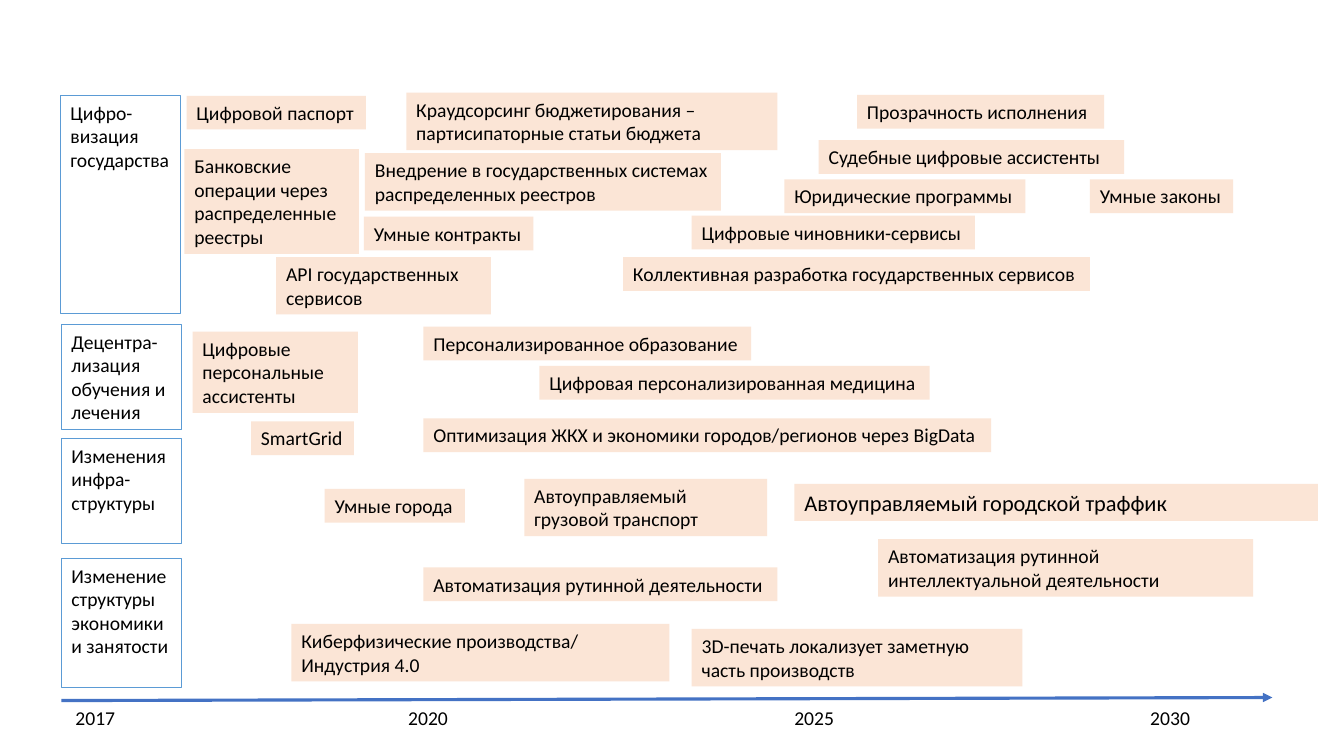
import pptx
import pptx.dml.color
import pptx.enum.shapes
import pptx.enum.text
import pptx.oxml
import pptx.oxml.ns
import pptx.util
from pptx.util import Inches


def color(value):
    return pptx.dml.color.RGBColor.from_string(value)


class Roadmap:
    font = "Calibri"
    text_color = "000000"
    item_fill = "FBE5D6"
    area_fill = "FFFFFF"
    area_line = "5B9BD5"
    axis_color = "4472C4"
    padding = 0.1
    line_height = 0.235

    def __init__(self, prs):
        self.s = prs.slides.add_slide(prs.slide_layouts[6])

    def set_text(self, sp, text, size=14):
        tf = sp.text_frame
        tf.word_wrap = True
        tf.vertical_anchor = pptx.enum.text.MSO_ANCHOR.TOP
        tf.text = text
        for p in tf.paragraphs:
            p.alignment = pptx.enum.text.PP_ALIGN.LEFT
            for r in p.runs:
                r.font.name = self.font
                r.font.size = pptx.util.Pt(size)
                r.font.color.rgb = color(self.text_color)

    def box(self, left, top, width, height, text, fill, size=14):
        sp = self.s.shapes.add_shape(
            pptx.enum.shapes.MSO_SHAPE.RECTANGLE,
            Inches(left), Inches(top), Inches(width), Inches(height))
        sp.shadow.inherit = False
        sp.fill.solid()
        sp.fill.fore_color.rgb = color(fill)
        sp.line.fill.background()
        self.set_text(sp, text, size)
        return sp

    def item(self, left, top, width, lines, text, size=14):
        height = self.padding + self.line_height * lines * size / 14
        self.box(left, top, width, height, text, self.item_fill, size)

    def area(self, left, top, height, text):
        sp = self.box(left, top, 1.19, height, text, self.area_fill)
        sp.line.color.rgb = color(self.area_line)
        sp.line.width = pptx.util.Pt(1)

    def year(self, left, text):
        sp = self.s.shapes.add_textbox(
            Inches(left), Inches(6.95), Inches(0.6), Inches(0.34))
        self.set_text(sp, text)

    def axis(self, x1, y1, x2, y2):
        line = self.s.shapes.add_connector(
            pptx.enum.shapes.MSO_CONNECTOR.STRAIGHT,
            Inches(x1), Inches(y1), Inches(x2), Inches(y2))
        line.line.color.rgb = color(self.axis_color)
        line.line.width = pptx.util.Pt(2.25)
        ns = pptx.oxml.ns.nsdecls("a")
        properties = line._element.spPr
        properties.find(pptx.oxml.ns.qn("a:ln")).append(
            pptx.oxml.parse_xml(f'<a:tailEnd {ns} type="triangle"/>'))
        properties.append(pptx.oxml.parse_xml(f"<a:effectLst {ns}/>"))


YEARS = [(0.65, "2017"), (3.95, "2020"), (7.78, "2025"), (11.31, "2030")]

AREAS = [
    (0.6, 0.95, 2.16, "Цифро-визация государства"),
    (0.61, 3.22, 1.04, "Децентра-лизация обучения и лечения"),
    (0.61, 4.35, 1.04, "Изменения инфра-структуры"),
    (0.61, 5.54, 1.28, "Изменение структуры экономики и занятости"),
]

ITEMS = [
    (1.85, 0.95, 1.78, 1, "Цифровой паспорт"),
    (4.03, 0.92, 3.68, 2, "Краудсорсинг бюджетирования – партисипаторные статьи бюджета"),
    (8.5, 0.94, 2.45, 1, "Прозрачность исполнения"),
    (8.12, 1.39, 3.03, 1, "Судебные цифровые ассистенты"),
    (1.83, 1.48, 1.73, 4, "Банковские операции через распределенные реестры"),
    (3.62, 1.52, 3.53, 2, "Внедрение в государственных системах распределенных реестров"),
    (7.78, 1.78, 2.39, 1, "Юридические программы"),
    (10.81, 1.78, 1.42, 1, "Умные законы"),
    (3.61, 2.15, 1.68, 1, "Умные контракты"),
    (6.86, 2.14, 2.81, 1, "Цифровые чиновники-сервисы"),
    (2.74, 2.55, 2.13, 2, "API государственных сервисов"),
    (6.18, 2.55, 4.63, 1, "Коллективная разработка государственных сервисов"),
    (1.91, 3.29, 1.64, 3, "Цифровые персональные ассистенты"),
    (4.2, 3.24, 3.25, 1, "Персонализированное образование"),
    (5.35, 3.63, 3.87, 1, "Цифровая персонализированная медицина"),
    (2.49, 4.18, 1.02, 1, "SmartGrid"),
    (4.2, 4.15, 5.63, 1, "Оптимизация ЖКХ и экономики городов/регионов через BigData"),
    (3.22, 4.85, 1.39, 1, "Умные города"),
    (5.2, 4.75, 2.41, 2, "Автоуправляемый грузовой транспорт"),
    (7.88, 4.8, 5.19, 1, "Автоуправляемый городской траффик", 16),
    (8.71, 5.35, 3.72, 2, "Автоматизация рутинной интеллектуальной деятельности"),
    (4.2, 5.63, 3.51, 1, "Автоматизация рутинной деятельности"),
    (2.89, 6.19, 3.75, 2, "Киберфизические производства/\nИндустрия 4.0"),
    (6.86, 6.24, 3.28, 2, "3D-печать локализует заметную часть производств"),
]


def main():
    prs = pptx.Presentation()
    prs.slide_width = Inches(13.33)
    prs.slide_height = Inches(7.5)
    roadmap = Roadmap(prs)
    roadmap.axis(0.61, 6.95, 12.62, 6.92)
    for year in YEARS:
        roadmap.year(*year)
    for item in ITEMS:
        roadmap.item(*item)
    for area in AREAS:
        roadmap.area(*area)
    prs.save("out.pptx")


if __name__ == "__main__":
    main()
